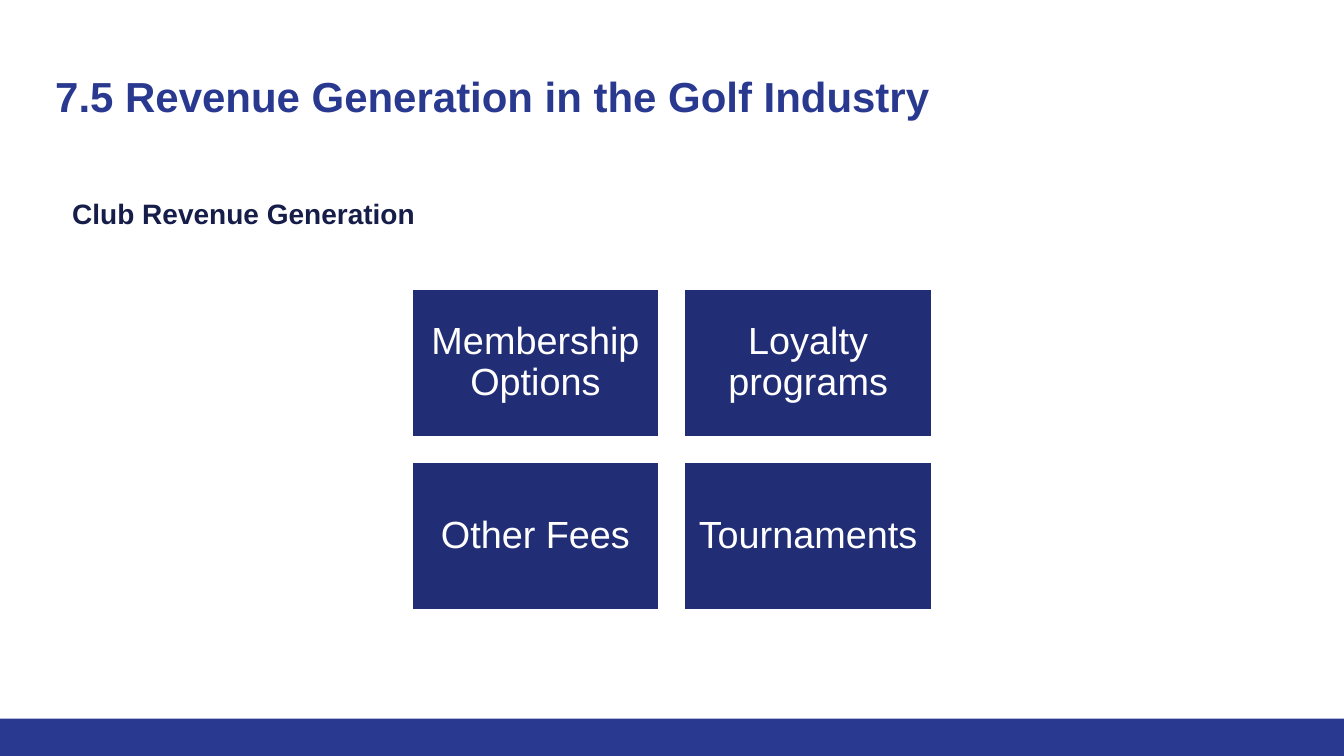
from lxml.etree import SubElement
from pptx import Presentation
from pptx.dml.color import RGBColor
from pptx.enum.shapes import MSO_SHAPE
from pptx.enum.text import MSO_ANCHOR, MSO_AUTO_SIZE, PP_ALIGN
from pptx.oxml.ns import qn
from pptx.util import Cm, Pt

COLORS = {
    "band": "2A3990",
    "title": "2A3990",
    "heading": "151D48",
    "tile": "212D74",
    "white": "FFFFFF",
}
FONT = "Arial"
SLIDE_WIDTH, SLIDE_HEIGHT = 33.87, 19.05
BAND_HEIGHT = 0.94
REVENUE_SOURCES = ["Membership Options", "Loyalty programs", "Other Fees", "Tournaments"]


def color(name):
    return RGBColor.from_string(COLORS[name])


def place(shape, box):
    shape.left, shape.top, shape.width, shape.height = (Cm(length) for length in box)


def set_frame(frame, inset, anchor):
    frame.word_wrap = True
    frame.auto_size = MSO_AUTO_SIZE.NONE
    frame.vertical_anchor = anchor
    frame.margin_left = frame.margin_right = Cm(inset)
    frame.margin_top = frame.margin_bottom = Cm(inset)


def write(para, text, size, color_name, bold, align, spacing):
    para.text = text
    para.alignment = align
    para.line_spacing = spacing
    para.space_before = Pt(0)
    para.font.name = FONT
    para.font.size = Pt(size)
    para.font.bold = bold
    para.font.color.rgb = color(color_name)


def add_rectangle(page, box, fill):
    shape = page.shapes.add_shape(
        MSO_SHAPE.RECTANGLE, *(Cm(length) for length in box))
    shape.shadow.inherit = False
    shape.fill.solid()
    shape.fill.fore_color.rgb = color(fill)
    return shape


def add_band(page, box):
    add_rectangle(page, box, "band").line.fill.background()


def fill_title(page, box):
    title = page.shapes.title
    place(title, box)
    set_frame(title.text_frame, 0.25, MSO_ANCHOR.TOP)
    write(title.text_frame.paragraphs[0],
          "7.5 Revenue Generation in the Golf Industry",
          30, "title", True, PP_ALIGN.LEFT, 1.0)


def fill_body(page, box):
    body = page.placeholders[1]
    place(body, box)
    set_frame(body.text_frame, 0.25, MSO_ANCHOR.TOP)
    para = body.text_frame.paragraphs[0]
    properties = para._p.get_or_add_pPr()
    properties.set("marL", str(Cm(0.43)))
    properties.set("indent", "0")
    SubElement(properties, qn("a:buNone"))
    write(para, "Club Revenue Generation", 20, "heading", True, PP_ALIGN.LEFT, 1.15)


def add_tiles(page, box, labels, columns=2, gap=0.62):
    """Share the box out among equal tiles, filled row by row."""
    left, top, width, height = box
    rows = -(-len(labels) // columns)
    tile_width = (width - gap * (columns - 1)) / columns
    tile_height = (height - gap * (rows - 1)) / rows
    for index, label in enumerate(labels):
        row, column = divmod(index, columns)
        tile = add_rectangle(page, (left + column * (tile_width + gap),
                                    top + row * (tile_height + gap),
                                    tile_width, tile_height), "tile")
        tile.line.color.rgb = color("white")
        tile.line.width = Pt(2)
        set_frame(tile.text_frame, 0.28, MSO_ANCHOR.MIDDLE)
        write(tile.text_frame.paragraphs[0], label,
              27, "white", False, PP_ALIGN.CENTER, 0.9)


def build_revenue_slide(deck):
    page = deck.slides.add_slide(deck.slide_layouts[1])
    add_band(page, (0, SLIDE_HEIGHT - BAND_HEIGHT, SLIDE_WIDTH, BAND_HEIGHT))
    fill_title(page, (1.14, 1.52, 31.55, 2.26))
    fill_body(page, (1.14, 4.57, 31.55, 12.98))
    add_tiles(page, (10.37, 7.26, 13.12, 8.13), REVENUE_SOURCES)


def main():
    deck = Presentation()
    deck.slide_width, deck.slide_height = Cm(SLIDE_WIDTH), Cm(SLIDE_HEIGHT)
    build_revenue_slide(deck)
    deck.save("out.pptx")


if __name__ == "__main__":
    main()
